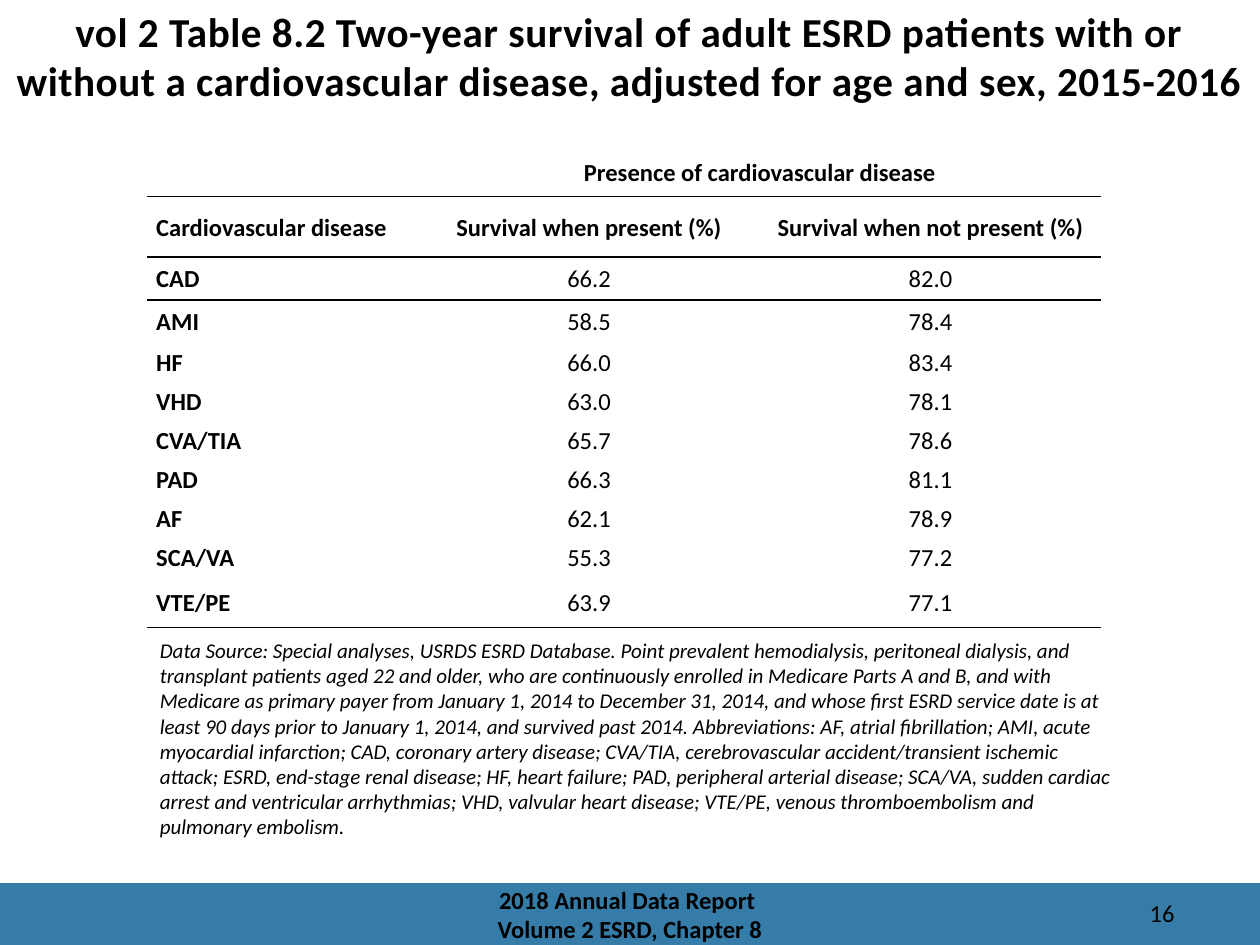
from dataclasses import dataclass
from lxml.etree import SubElement
from pptx import Presentation
from pptx.dml.color import RGBColor
from pptx.enum.shapes import MSO_SHAPE
from pptx.enum.text import MSO_ANCHOR, MSO_AUTO_SIZE, PP_ALIGN
from pptx.oxml.ns import qn
from pptx.util import Inches, Pt


@dataclass(frozen=True)
class Theme:
    font: str = "Calibri"
    ink: RGBColor = RGBColor(0, 0, 0)
    band: RGBColor = RGBColor(0x36, 0x7C, 0xA8)
    head: float = 23.5
    body: float = 14
    note: float = 12


THEME = Theme()
WIDE, HIGH = 10, 7.5
BAND = 7.01
LEFT = 1.17
COLS = [2.15, 2.71, 2.71]
ROWS = [0.39, 0.48, 0.34, 0.34] + [0.31] * 6 + [0.4]
PLAIN = "{2D5ABB26-0587-4C30-8999-92F81FD0307C}"

TITLE = ("vol 2 Table 8.2 Two-year survival of adult ESRD patients with or "
         "without a cardiovascular disease, adjusted for age and sex, 2015-2016")
DATA = [
    ("", "Presence of cardiovascular disease", ""),
    ("Cardiovascular disease", "Survival when present (%)",
     "Survival when not present (%)"),
    ("CAD", "66.2", "82.0"),
    ("AMI", "58.5", "78.4"),
    ("HF", "66.0", "83.4"),
    ("VHD", "63.0", "78.1"),
    ("CVA/TIA", "65.7", "78.6"),
    ("PAD", "66.3", "81.1"),
    ("AF", "62.1", "78.9"),
    ("SCA/VA", "55.3", "77.2"),
    ("VTE/PE", "63.9", "77.1"),
]
NOTE = (
    "Data Source: Special analyses, USRDS ESRD Database. Point prevalent "
    "hemodialysis, peritoneal dialysis, and transplant patients aged 22 and "
    "older, who are continuously enrolled in Medicare Parts A and B, and with "
    "Medicare as primary payer from January 1, 2014 to December 31, 2014, and "
    "whose first ESRD service date is at least 90 days prior to January 1, "
    "2014, and survived past 2014. Abbreviations: AF, atrial fibrillation; "
    "AMI, acute myocardial infarction; CAD, coronary artery disease; CVA/TIA, "
    "cerebrovascular accident/transient ischemic attack; ESRD, end-stage renal "
    "disease; HF, heart failure; PAD, peripheral arterial disease; SCA/VA, "
    "sudden cardiac arrest and ventricular arrhythmias; VHD, valvular heart "
    "disease; VTE/PE, venous thromboembolism and pulmonary embolism."
)


def write(frame, text, size, align=PP_ALIGN.LEFT, bold=False, italic=False):
    frame.text = text
    para = frame.paragraphs[0]
    para.alignment = align
    font = para.font
    font.name, font.size = THEME.font, Pt(size)
    font.bold, font.italic = bold, italic
    font.color.rgb = THEME.ink
    return para


def add_title(slide):
    title = slide.shapes.title
    title.left = title.top = 0
    title.width, title.height = Inches(WIDE), Inches(LEFT)
    frame = title.text_frame
    frame.auto_size = MSO_AUTO_SIZE.NONE
    frame.vertical_anchor = MSO_ANCHOR.TOP
    para = write(frame, TITLE, THEME.head, PP_ALIGN.CENTER, bold=True)
    para.runs[0].font._element.set("spc", "30")


def add_band(slide):
    band = slide.shapes.add_shape(MSO_SHAPE.RECTANGLE, 0, Inches(BAND),
                                  Inches(WIDE), Inches(HIGH - BAND))
    band.shadow.inherit = False
    band.fill.solid()
    band.fill.fore_color.rgb = THEME.band
    band.line.fill.background()


def add_text(slide, box, text, size, anchor=MSO_ANCHOR.TOP, **style):
    frame = slide.shapes.add_textbox(*map(Inches, box)).text_frame
    frame.word_wrap = True
    frame.vertical_anchor = anchor
    write(frame, text, size, **style)


def rule(cell, side):
    """Draw a 1 pt line on one side of a cell: lnT or lnB."""
    line = SubElement(cell._tc.get_or_add_tcPr(), qn("a:" + side), w=str(Pt(1)))
    fill = SubElement(line, qn("a:solidFill"))
    SubElement(fill, qn("a:srgbClr"), val=str(THEME.ink))


def fill_cell(cell, row, col, text):
    cell.margin_left = cell.margin_right = Inches(0.07)
    cell.margin_top = cell.margin_bottom = 0
    cell.vertical_anchor = MSO_ANCHOR.MIDDLE
    align = PP_ALIGN.CENTER if col else PP_ALIGN.LEFT
    para = write(cell.text_frame, text, THEME.body, align,
                 bold=row < 2 or col == 0)
    para.line_spacing = 1.07
    if row in (1, 2):
        rule(cell, "lnT")
    if row in (0, 1, len(DATA) - 1):
        rule(cell, "lnB")
    cell.fill.background()


def add_grid(slide):
    frame = slide.shapes.add_table(len(ROWS), len(COLS), Inches(LEFT),
                                   Inches(LEFT), Inches(sum(COLS)),
                                   Inches(sum(ROWS)))
    grid = frame.table
    grid.first_row = grid.horz_banding = False
    grid._tbl.tblPr.find(qn("a:tableStyleId")).text = PLAIN
    for col, width in zip(grid.columns, COLS):
        col.width = Inches(width)
    for row, height in zip(grid.rows, ROWS):
        row.height = Inches(height)
    for r, line in enumerate(DATA):
        for c, text in enumerate(line):
            fill_cell(grid.cell(r, c), r, c, text)
    grid.cell(0, 1).merge(grid.cell(0, 2))


def main():
    deck = Presentation()
    deck.slide_width, deck.slide_height = Inches(WIDE), Inches(HIGH)
    slide = deck.slides.add_slide(deck.slide_layouts[5])
    add_band(slide)
    add_text(slide, (8.42, 7.08, 1, 0.3), "16", THEME.body,
             align=PP_ALIGN.RIGHT)
    add_title(slide)
    add_grid(slide)
    add_text(slide, (3.31, BAND, 3.38, HIGH - BAND),
             "2018 Annual Data Report \vVolume 2 ESRD, Chapter 8", THEME.body,
             MSO_ANCHOR.MIDDLE, align=PP_ALIGN.CENTER, bold=True)
    add_text(slide, (LEFT, 5.01, 7.75, 1.72), NOTE, THEME.note, italic=True)
    deck.save("out.pptx")


if __name__ == "__main__":
    main()
